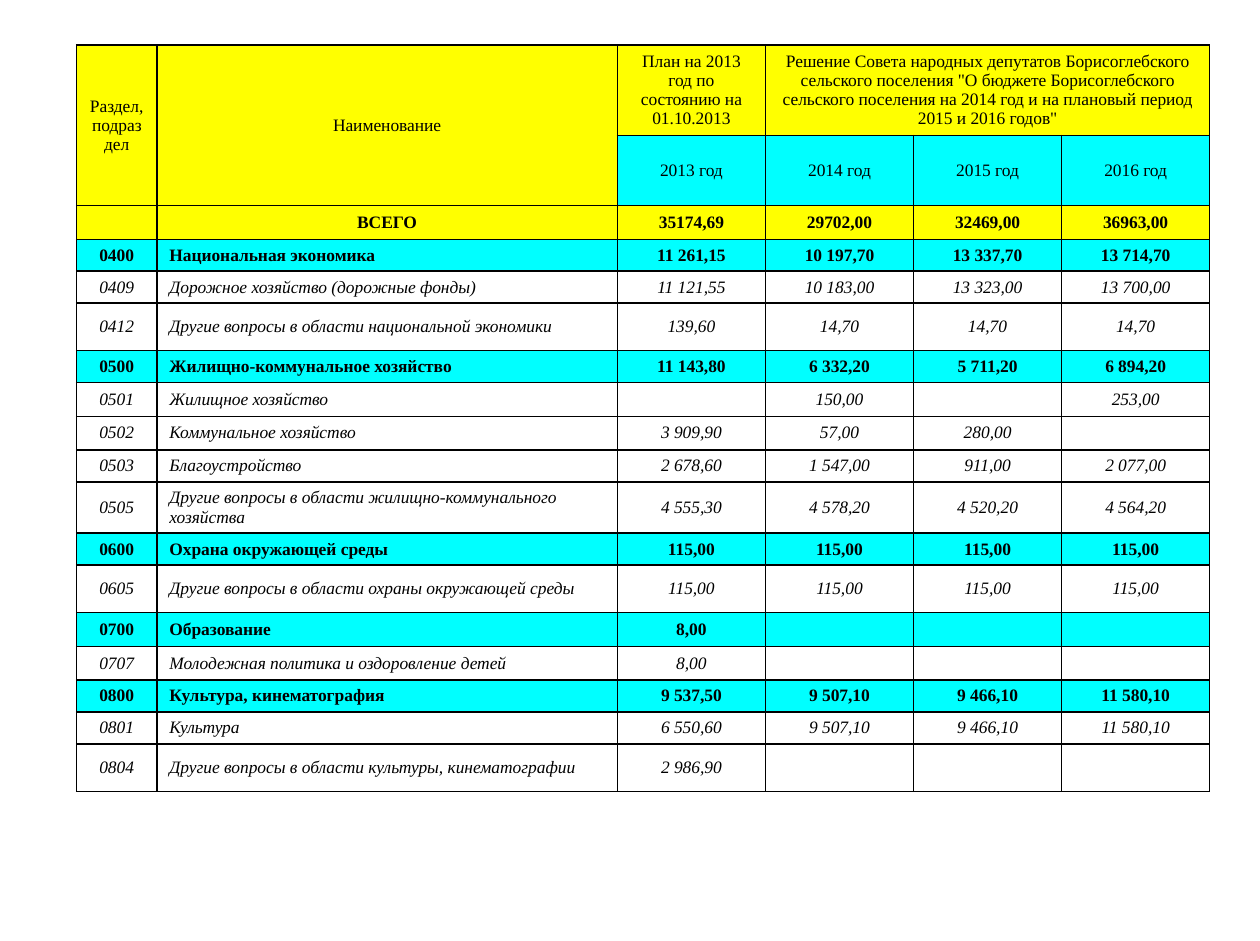
from dataclasses import dataclass
from typing import Optional

from lxml import etree
from pptx import Presentation
from pptx import util as u
from pptx.dml.color import RGBColor
from pptx.enum import text
from pptx.oxml.ns import qn
from pptx.table import Table, _Cell

BLACK = RGBColor(0x00, 0x00, 0x00)
YELLOW = RGBColor(0xFF, 0xFF, 0x00)
CYAN = RGBColor(0x00, 0xFF, 0xFF)

FONT = "Times New Roman"
FONT_SIZE = u.Pt(10)
BORDER_WIDTH = u.Pt(1)
LEFT, TOP = 0.61, 0.36
COLUMN_WIDTHS = [0.64, 3.67] + [1.18] * 4
HEADER_HEIGHTS = [0.72, 0.56]
SINGLE, TALL, DOUBLE = 0.25, 0.38, 0.41
YEARS = ("2013 год", "2014 год", "2015 год", "2016 год")


@dataclass(frozen=True)
class BudgetRow:
    code: str
    name: str
    amounts: tuple[str, str, str, str]
    height: float = SINGLE

    @property
    def is_total(self) -> bool:
        return not self.code

    @property
    def is_section(self) -> bool:
        return self.code.endswith("00")

    @property
    def fill(self) -> Optional[RGBColor]:
        if self.is_total:
            return YELLOW
        return CYAN if self.is_section else None


@dataclass(frozen=True)
class HeaderCell:
    row: int
    column: int
    label: str
    last_row: int
    last_column: int


HEADERS = [
    HeaderCell(0, 0, "Раздел, подраздел", 1, 0),
    HeaderCell(0, 1, "Наименование", 1, 1),
    HeaderCell(0, 2, "План на 2013 год по состоянию на 01.10.2013", 0, 2),
    HeaderCell(
        0, 3,
        "Решение Совета народных депутатов Борисоглебского сельского поселения "
        "\"О бюджете Борисоглебского сельского поселения на 2014 год "
        "и на плановый период 2015 и 2016 годов\"",
        0, 5,
    ),
]

BUDGET = [
    BudgetRow("", "ВСЕГО", ("35174,69", "29702,00", "32469,00", "36963,00")),
    BudgetRow("0400", "Национальная экономика",
              ("11 261,15", "10 197,70", "13 337,70", "13 714,70")),
    BudgetRow("0409", "Дорожное хозяйство (дорожные фонды)",
              ("11 121,55", "10 183,00", "13 323,00", "13 700,00")),
    BudgetRow("0412", "Другие вопросы в области национальной экономики",
              ("139,60", "14,70", "14,70", "14,70"), TALL),
    BudgetRow("0500", "Жилищно-коммунальное хозяйство",
              ("11 143,80", "6 332,20", "5 711,20", "6 894,20")),
    BudgetRow("0501", "Жилищное хозяйство", ("", "150,00", "", "253,00")),
    BudgetRow("0502", "Коммунальное хозяйство", ("3 909,90", "57,00", "280,00", "")),
    BudgetRow("0503", "Благоустройство", ("2 678,60", "1 547,00", "911,00", "2 077,00")),
    BudgetRow("0505", "Другие вопросы в области жилищно-коммунального хозяйства",
              ("4 555,30", "4 578,20", "4 520,20", "4 564,20"), DOUBLE),
    BudgetRow("0600", "Охрана окружающей среды", ("115,00",) * 4),
    BudgetRow("0605", "Другие вопросы в области охраны окружающей среды",
              ("115,00",) * 4, TALL),
    BudgetRow("0700", "Образование", ("8,00", "", "", "")),
    BudgetRow("0707", "Молодежная политика и оздоровление детей", ("8,00", "", "", "")),
    BudgetRow("0800", "Культура, кинематография",
              ("9 537,50", "9 507,10", "9 466,10", "11 580,10")),
    BudgetRow("0801", "Культура", ("6 550,60", "9 507,10", "9 466,10", "11 580,10")),
    BudgetRow("0804", "Другие вопросы в области культуры, кинематографии",
              ("2 986,90", "", "", ""), TALL),
]


def add_borders(cell: _Cell) -> None:
    properties = cell._tc.get_or_add_tcPr()
    for side in ("a:lnL", "a:lnR", "a:lnT", "a:lnB"):
        line = etree.SubElement(properties, qn(side), w=str(int(BORDER_WIDTH)))
        fill = etree.SubElement(line, qn("a:solidFill"))
        etree.SubElement(fill, qn("a:srgbClr"), val=str(BLACK))


def fill_cell(cell: _Cell, color: Optional[RGBColor]) -> None:
    if color is None:
        cell.fill.background()
    else:
        cell.fill.solid()
        cell.fill.fore_color.rgb = color


def write_text(cell: _Cell, label: str, *, bold: bool = False, italic: bool = False,
               centered: bool = True) -> None:
    cell.vertical_anchor = text.MSO_ANCHOR.MIDDLE
    para = cell.text_frame.paragraphs[0]
    para.alignment = text.PP_ALIGN.CENTER if centered else text.PP_ALIGN.LEFT
    if not label:
        # An empty cell needs the small size too, or its row grows
        etree.SubElement(para._p, qn("a:endParaRPr"), sz=str(int(FONT_SIZE.pt * 100)))
        return
    span = para.add_run()
    span.text = label
    span.font.name = FONT
    span.font.size = FONT_SIZE
    span.font.bold = bold
    span.font.italic = italic
    span.font.color.rgb = BLACK


def draw_header(table: Table) -> None:
    for header in HEADERS:
        cell = table.cell(header.row, header.column)
        last = table.cell(header.last_row, header.last_column)
        if last != cell:
            cell.merge(last)
        fill_cell(cell, YELLOW)
        write_text(cell, header.label)
    for column, year in enumerate(YEARS, start=2):
        cell = table.cell(1, column)
        fill_cell(cell, CYAN)
        write_text(cell, year)


def draw_budget_row(table: Table, index: int, row: BudgetRow) -> None:
    heavy = row.is_total or row.is_section
    for column, label in enumerate((row.code, row.name, *row.amounts)):
        cell = table.cell(index, column)
        fill_cell(cell, row.fill)
        write_text(cell, label, bold=heavy, italic=not heavy,
                   centered=column != 1 or row.is_total)


def main() -> None:
    deck = Presentation()
    deck.slide_width, deck.slide_height = u.Inches(10.04), u.Inches(7.5)
    page = deck.slides.add_slide(deck.slide_layouts[6])

    # Table grid
    heights = HEADER_HEIGHTS + [row.height for row in BUDGET]
    frame = page.shapes.add_table(
        len(heights), len(COLUMN_WIDTHS), u.Inches(LEFT), u.Inches(TOP),
        u.Inches(sum(COLUMN_WIDTHS)), u.Inches(sum(heights)),
    )
    table = frame.table
    table.first_row = table.horz_banding = False
    for grid_column, width in zip(table.columns, COLUMN_WIDTHS):
        grid_column.width = u.Inches(width)
    for grid_row, height in zip(table.rows, heights):
        grid_row.height = u.Inches(height)
    for cell in table.iter_cells():
        add_borders(cell)

    # Table content
    draw_header(table)
    for index, row in enumerate(BUDGET, start=len(HEADER_HEIGHTS)):
        draw_budget_row(table, index, row)

    deck.save("out.pptx")


if __name__ == "__main__":
    main()
